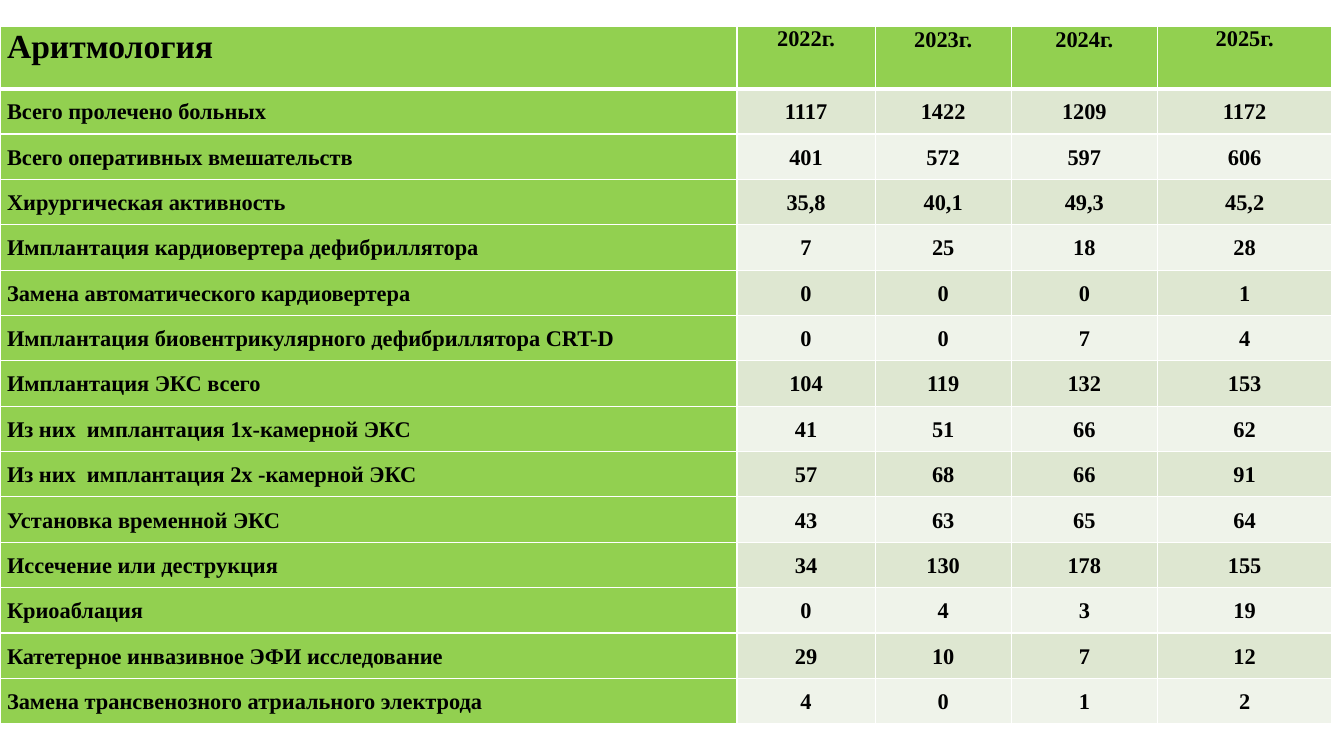
from lxml.etree import SubElement
from pptx import Presentation
from pptx.dml.color import RGBColor
from pptx.enum.text import MSO_ANCHOR, PP_ALIGN
from pptx.oxml.ns import qn
from pptx.util import Inches, Pt

GREEN = RGBColor(0x92, 0xD0, 0x50)
BANDS = (RGBColor(0xDE, 0xE7, 0xD1), RGBColor(0xEF, 0xF3, 0xEA))
BLACK = RGBColor(0, 0, 0)
WHITE = RGBColor(0xFF, 0xFF, 0xFF)
FONT = "Times New Roman"

TABLE_TOP = 0.26
COLUMN_WIDTHS = (7.31, 1.37, 1.35, 1.45, 1.73)
HEADER_HEIGHT = 0.62
ROW_HEIGHT = 0.45
LINE_SPACING = 1.07
SINGLE_SPACED_YEARS = ("2022г.", "2025г.")

ROWS = (
    ("Аритмология", "2022г.", "2023г.", "2024г.", "2025г."),
    ("Всего пролечено больных", "1117", "1422", "1209", "1172"),
    ("Всего оперативных вмешательств", "401", "572", "597", "606"),
    ("Хирургическая активность", "35,8", "40,1", "49,3", "45,2"),
    ("Имплантация кардиовертера дефибриллятора", "7", "25", "18", "28"),
    ("Замена автоматического кардиовертера", "0", "0", "0", "1"),
    ("Имплантация биовентрикулярного дефибриллятора CRT-D", "0", "0", "7", "4"),
    ("Имплантация ЭКС всего", "104", "119", "132", "153"),
    ("Из них  имплантация 1х-камерной ЭКС", "41", "51", "66", "62"),
    ("Из них  имплантация 2х -камерной ЭКС", "57", "68", "66", "91"),
    ("Установка временной ЭКС", "43", "63", "65", "64"),
    ("Иссечение или деструкция", "34", "130", "178", "155"),
    ("Криоаблация", "0", "4", "3", "19"),
    ("Катетерное инвазивное ЭФИ исследование", "29", "10", "7", "12"),
    ("Замена трансвенозного атриального электрода", "4", "0", "1", "2"),
)


def set_borders(cell, top, bottom):
    """Draw white borders, one point wide at the sides."""
    properties = cell._tc.get_or_add_tcPr()
    for side, width in (("L", 1), ("R", 1), ("T", top), ("B", bottom)):
        line = SubElement(properties, qn(f"a:ln{side}"), w=str(Pt(width)))
        fill = SubElement(line, qn("a:solidFill"))
        SubElement(fill, qn("a:srgbClr"), val=str(WHITE))


def set_fill(cell, color):
    cell.fill.solid()
    cell.fill.fore_color.rgb = color


def write_cell(cell, text, size, alignment, anchor):
    cell.margin_left = cell.margin_right = Inches(0.07)
    cell.margin_top = cell.margin_bottom = 0
    cell.vertical_anchor = anchor
    para = cell.text_frame.paragraphs[0]
    para.text = text
    para.alignment = alignment
    if text not in SINGLE_SPACED_YEARS:
        para.line_spacing = LINE_SPACING
    font = para.runs[0].font
    font.name = FONT
    font.size = Pt(size)
    font.bold = True
    font.color.rgb = BLACK


def add_results_table(slide):
    height = HEADER_HEIGHT + ROW_HEIGHT * (len(ROWS) - 1)
    table = slide.shapes.add_table(
        len(ROWS), len(COLUMN_WIDTHS), 0, Inches(TABLE_TOP),
        Inches(sum(COLUMN_WIDTHS)), Inches(height)).table
    table.first_col = True
    for column, width in zip(table.columns, COLUMN_WIDTHS):
        column.width = Inches(width)
    for row_index, texts in enumerate(ROWS):
        is_header = row_index == 0
        table.rows[row_index].height = Inches(HEADER_HEIGHT if is_header else ROW_HEIGHT)
        anchor = MSO_ANCHOR.TOP if is_header else MSO_ANCHOR.MIDDLE
        for column_index, text in enumerate(texts):
            cell = table.cell(row_index, column_index)
            is_label = column_index == 0
            set_borders(cell, top=3 if row_index == 1 else 1, bottom=3 if is_header else 1)
            set_fill(cell, GREEN if is_header or is_label else BANDS[(row_index - 1) % 2])
            write_cell(cell, text, 24 if is_header and is_label else 16,
                       PP_ALIGN.LEFT if is_label else PP_ALIGN.CENTER, anchor)


def main():
    deck = Presentation()
    deck.slide_width = Inches(13.33)
    deck.slide_height = Inches(7.5)
    slide = deck.slides.add_slide(deck.slide_layouts[6])
    add_results_table(slide)
    deck.save("out.pptx")


if __name__ == "__main__":
    main()
